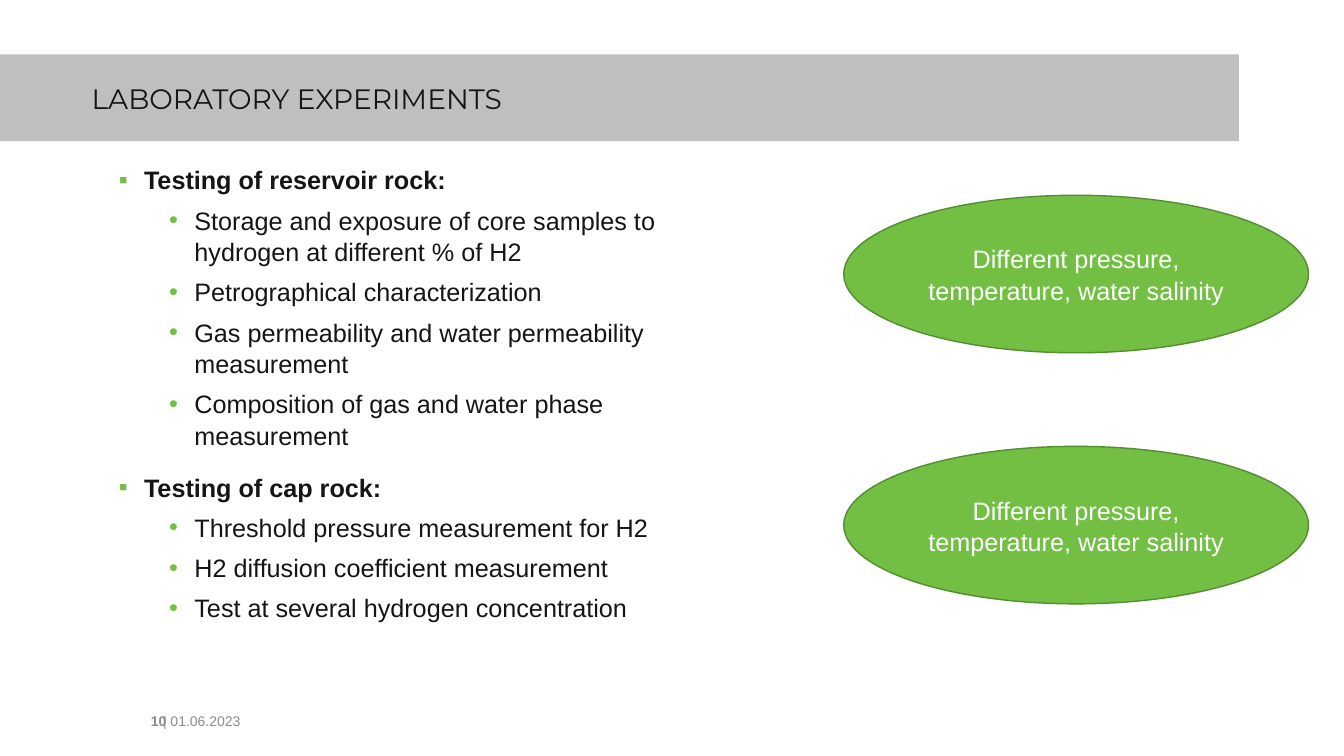
import pptx
import pptx.util
import pptx.dml.color
import pptx.enum.shapes
import pptx.enum.text
from lxml import etree

Pt = pptx.util.Pt
RGB = pptx.dml.color.RGBColor
PP_ALIGN = pptx.enum.text.PP_ALIGN
ANCHOR = pptx.enum.text.MSO_ANCHOR
SHAPE = pptx.enum.shapes.MSO_SHAPE

# Content
TITLE = "LABORATORY EXPERIMENTS"
CONDITIONS = "Different pressure, temperature, water salinity"
PAGE, DATE = "10", "| 01.06.2023"
# Each test: list top, list height, ellipse top, heading, items
TESTS = [
    (113, 206, 139.5, "Testing of reservoir rock:", [
        "Storage and exposure of core samples to hydrogen at different % of H2",
        "Petrographical characterization",
        "Gas permeability and water permeability measurement",
        "Composition of gas and water phase measurement",
    ]),
    (332.5, 113, 318.8, "Testing of cap rock:", [
        "Threshold pressure measurement for H2",
        "H2 diffusion coefficient measurement",
        "Test at several hydrogen concentration",
    ]),
]

# Colours and formats
GREEN = RGB(0x72, 0xBF, 0x44)
DARK_GREEN = RGB(0x54, 0x8D, 0x32)
BAND = RGB(0xBF, 0xBF, 0xBF)
INK = RGB(0x15, 0x15, 0x15)
GREY = RGB(0x8C, 0x8C, 0x8C)
WHITE = RGB(0xFF, 0xFF, 0xFF)
TITLE_FONT = {"name": "Montserrat", "size": Pt(20), "color": INK}
HEADING_FONT = {"name": "Arial", "size": Pt(18), "color": INK, "bold": True}
ITEM_FONT = {**HEADING_FONT, "bold": False}
ELLIPSE_FONT = {**ITEM_FONT, "color": WHITE}
DATE_FONT = {"name": "Arial", "size": Pt(10), "color": GREY}
PAGE_FONT = {**DATE_FONT, "bold": True}

# Layout
LEFT, LIST_W = 77.8, 468
ELLIPSE_X, ELLIPSE_W, ELLIPSE_H = 602.7, 332, 112.5
FOOTER_Y, FOOTER_H = 500.4, 28.8
LINE_SPACING = 1.05

prs = pptx.Presentation()
prs.slide_width, prs.slide_height = Pt(960), Pt(540)
s = prs.slides.add_slide(prs.slide_layouts[6])


def write(p, text, font, **layout):
    for name, value in layout.items():
        setattr(p, name, value)
    r = p.add_run()
    r.text = text
    for name, value in font.items():
        if name == "color":
            r.font.color.rgb = value
        else:
            setattr(r.font, name, value)


def add_box(x, y, w, h, anchor=ANCHOR.TOP):
    tf = s.shapes.add_textbox(Pt(x), Pt(y), Pt(w), Pt(h)).text_frame
    tf.word_wrap = True
    tf.vertical_anchor = anchor
    return tf


def add_shape(kind, x, y, w, h, fill, line=None):
    sp = s.shapes.add_shape(kind, Pt(x), Pt(y), Pt(w), Pt(h))
    sp.shadow.inherit = False
    sp.fill.solid()
    sp.fill.fore_color.rgb = fill
    if line is None:
        sp.line.fill.background()
    else:
        sp.line.color.rgb = line
        sp.line.width = Pt(1)
    sp.text_frame.word_wrap = True
    return sp.text_frame


def set_bullet(p, char, indent):
    pPr = p._p.get_or_add_pPr()
    pPr.set("marL", str(Pt(indent)))
    pPr.set("indent", str(-Pt(18)))
    ns = "{http://schemas.openxmlformats.org/drawingml/2006/main}"
    color = etree.SubElement(pPr, ns + "buClr")
    etree.SubElement(color, ns + "srgbClr", val=str(GREEN))
    etree.SubElement(pPr, ns + "buFont", typeface="Arial")
    etree.SubElement(pPr, ns + "buChar", char=char)


# Title band
tf = add_shape(SHAPE.RECTANGLE, 0, 38.9, 885, 61.9, BAND)
margins = {"margin_left": 65.5, "margin_top": 22.3,
           "margin_right": 7.2, "margin_bottom": 17.3}
for name, value in margins.items():
    setattr(tf, name, Pt(value))
tf.vertical_anchor = ANCHOR.TOP
write(tf.paragraphs[0], TITLE, TITLE_FONT, alignment=PP_ALIGN.LEFT, line_spacing=0.9)

# Test lists, each with its ellipse of conditions
for top, height, ellipse_top, heading, items in TESTS:
    tf = add_box(LEFT, top, LIST_W, height)
    p = tf.paragraphs[0]
    set_bullet(p, "▪", 18)
    write(p, heading, HEADING_FONT, line_spacing=LINE_SPACING)
    for item in items:
        p = tf.add_paragraph()
        set_bullet(p, "•", 54)
        write(p, item, ITEM_FONT, level=1, space_before=Pt(6), line_spacing=LINE_SPACING)

    tf = add_shape(SHAPE.OVAL, ELLIPSE_X, ellipse_top, ELLIPSE_W, ELLIPSE_H,
                   GREEN, DARK_GREEN)
    tf.vertical_anchor = ANCHOR.MIDDLE
    write(tf.paragraphs[0], CONDITIONS, ELLIPSE_FONT,
          alignment=PP_ALIGN.CENTER, line_spacing=LINE_SPACING)

# Footer
tf = add_box(109.4, FOOTER_Y, 216, FOOTER_H, ANCHOR.MIDDLE)
write(tf.paragraphs[0], DATE, DATE_FONT)
tf = add_box(LEFT, FOOTER_Y, 48.2, FOOTER_H, ANCHOR.MIDDLE)
write(tf.paragraphs[0], PAGE, PAGE_FONT, alignment=PP_ALIGN.RIGHT)

prs.save("out.pptx")
